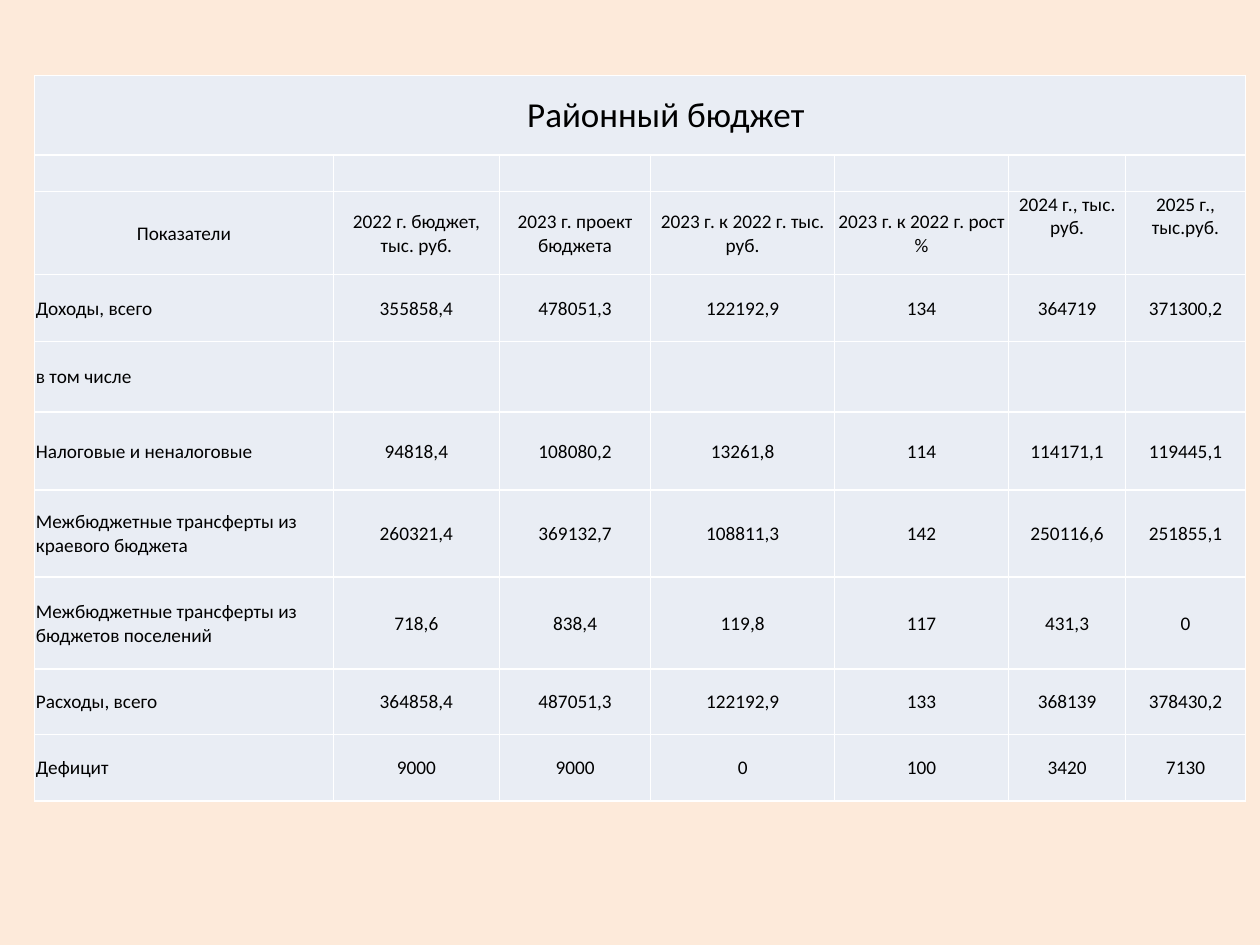
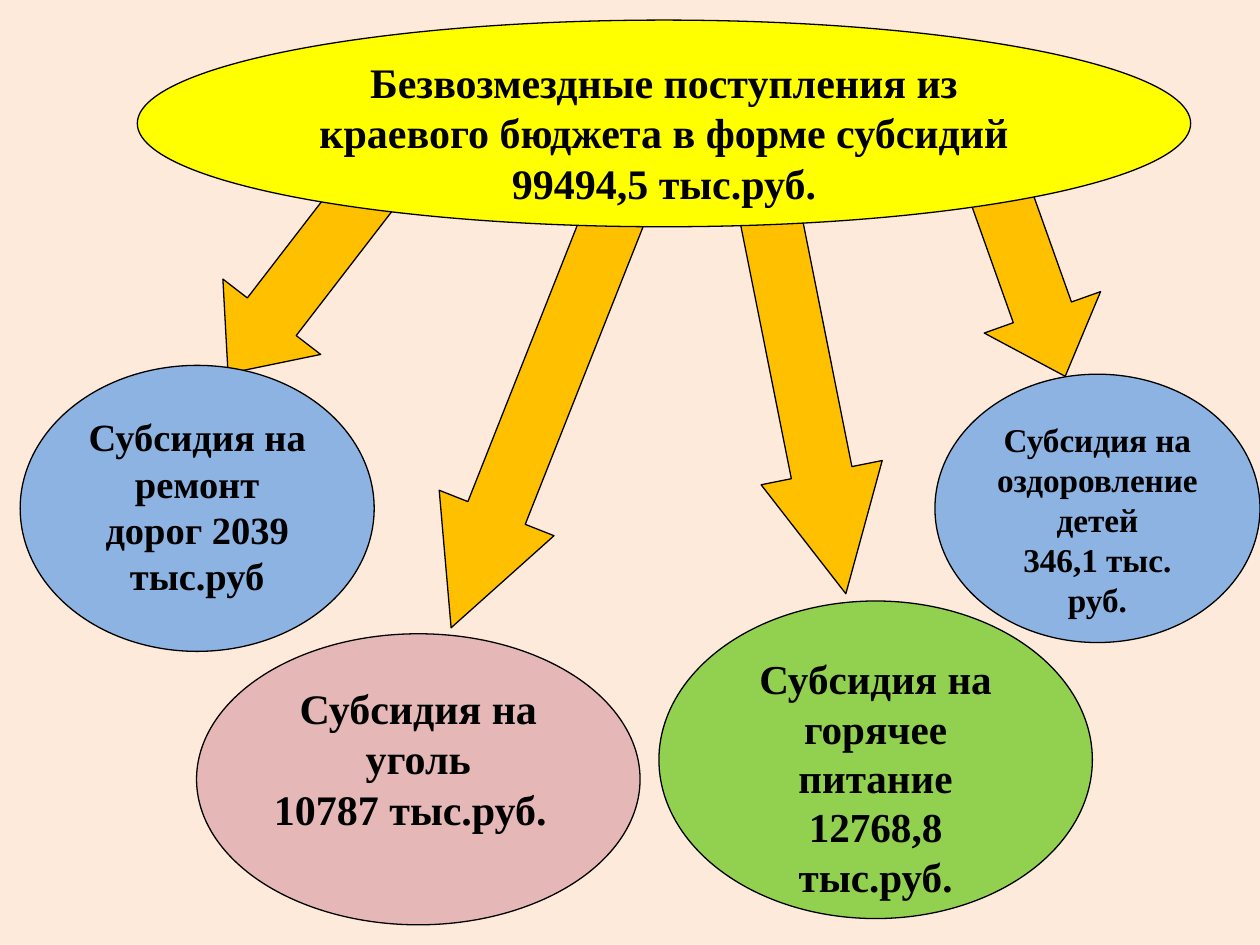
from dataclasses import dataclass

from lxml import etree
from pptx import Presentation
from pptx.dml.color import RGBColor
from pptx.enum.shapes import MSO_SHAPE
from pptx.enum.text import MSO_ANCHOR, PP_ALIGN
from pptx.oxml.ns import qn
from pptx.util import Inches, Pt

LEFT, CENTER = PP_ALIGN.LEFT, PP_ALIGN.CENTER
TOP, MIDDLE = MSO_ANCHOR.TOP, MSO_ANCHOR.MIDDLE
OVAL, DOWN_ARROW = MSO_SHAPE.OVAL, MSO_SHAPE.DOWN_ARROW
BLANK = 6
GRID_COLS, GRID_ROWS = 100, 75


@dataclass(frozen=True)
class Theme:
    background: str = "FDEADA"
    text: str = "000000"
    cell: str = "E9EDF4"
    border: str = "FFFFFF"
    arrow: str = "FFC000"
    total: str = "FFFF00"
    blue: str = "8DB3E2"
    pink: str = "E5B8B7"
    green: str = "92D050"
    table_font: str = "Calibri"
    oval_font: str = "Times New Roman"
    caption_size: float = 20
    cell_size: float = 11
    total_size: float = 24
    outline: float = 0.75
    border_width: float = 1


def write(tf, *lines, font, size, color, bold=False, aligns=(CENTER,)):
    """Write one paragraph per line; the last alignment serves the remaining lines."""
    tf.word_wrap = True
    for i, line in enumerate(lines):
        p = tf.paragraphs[0] if i == 0 else tf.add_paragraph()
        p.alignment = aligns[min(i, len(aligns) - 1)]
        if not line:
            etree.SubElement(p._p, qn("a:endParaRPr"), sz=str(int(size * 100)))
            continue
        r = p.add_run()
        r.text = line
        r.font.name, r.font.size, r.font.bold = font, Pt(size), bold
        r.font.color.rgb = RGBColor.from_string(color)


class Deck:
    def __init__(self, theme):
        self.theme = theme
        self.prs = Presentation()
        self.prs.slide_width, self.prs.slide_height = Inches(10), Inches(7.5)
        self.s = None

    def x(self, cols):
        return round(self.prs.slide_width * cols / GRID_COLS)

    def y(self, rows):
        return round(self.prs.slide_height * rows / GRID_ROWS)

    def box(self, left, top, width, height):
        return self.x(left), self.y(top), self.x(width), self.y(height)

    def slide(self):
        self.s = self.prs.slides.add_slide(self.prs.slide_layouts[BLANK])
        fill = self.s.background.fill
        fill.solid()
        fill.fore_color.rgb = RGBColor.from_string(self.theme.background)

    def shape(self, kind, at, color):
        sp = self.s.shapes.add_shape(kind, *self.box(*at))
        sp.shadow.inherit = False
        sp.fill.solid()
        sp.fill.fore_color.rgb = RGBColor.from_string(color)
        sp.line.color.rgb = RGBColor.from_string(self.theme.text)
        sp.line.width = Pt(self.theme.outline)
        return sp

    def arrow(self, at, rotation, head):
        sp = self.shape(DOWN_ARROW, at, self.theme.arrow)
        sp.rotation = rotation
        sp.adjustments[1] = head

    def oval(self, at, color, size, *lines, aligns=(CENTER,)):
        tf = self.shape(OVAL, at, color).text_frame
        tf.vertical_anchor = TOP
        write(tf, *lines, font=self.theme.oval_font, size=size,
              color=self.theme.text, bold=True, aligns=aligns)

    def cell(self, cell, text, size, align, anchor=MIDDLE, indent=0.1):
        cell.margin_left, cell.margin_right = self.x(indent), self.x(0.1)
        cell.margin_top, cell.margin_bottom = self.y(0.1), 0
        cell.vertical_anchor = anchor
        tcPr = cell._tc.get_or_add_tcPr()
        for side in ("a:lnL", "a:lnR", "a:lnT", "a:lnB"):
            ln = etree.SubElement(tcPr, qn(side), w=str(Pt(self.theme.border_width)))
            solid = etree.SubElement(ln, qn("a:solidFill"))
            etree.SubElement(solid, qn("a:srgbClr"), val=self.theme.border)
        cell.fill.solid()
        cell.fill.fore_color.rgb = RGBColor.from_string(self.theme.cell)
        write(cell.text_frame, text, font=self.theme.table_font, size=size,
              color=self.theme.text, aligns=(align,))

    def table(self, left, top, widths, heights, caption, header, body):
        at = self.box(left, top, sum(widths), sum(heights))
        table = self.s.shapes.add_table(len(heights), len(widths), *at).table
        table.first_row = table.horz_banding = False
        for column, width in zip(table.columns, widths):
            column.width = self.x(width)
        for row, height in zip(table.rows, heights):
            row.height = self.y(height)

        # Caption across the whole table, then an empty row
        blank = [""] * len(widths)
        table.cell(0, 0).merge(table.cell(0, len(widths) - 1))
        for i, text in enumerate([caption] + blank[1:]):
            self.cell(table.cell(0, i), text, self.theme.caption_size, CENTER, indent=4.2)

        # Header and figures
        for j, values in enumerate([blank, header, *body], start=1):
            for i, text in enumerate(values):
                align = LEFT if i == 0 and j > 2 else CENTER
                anchor = TOP if j == 2 and i >= 5 else MIDDLE
                self.cell(table.cell(j, i), text, self.theme.cell_size, align, anchor)


def budget_slide(deck):
    deck.slide()
    header = ["Показатели", "2022 г. бюджет, тыс. руб.", "2023 г. проект бюджета",
              "2023 г. к 2022 г. тыс. руб.", "2023 г. к 2022 г. рост %",
              "2024 г., тыс. руб.", "2025 г., тыс.руб."]
    body = [
        ["Доходы, всего", "355858,4", "478051,3", "122192,9", "134", "364719", "371300,2"],
        ["в том числе"] + [""] * 6,
        ["Налоговые и неналоговые",
         "94818,4", "108080,2", "13261,8", "114", "114171,1", "119445,1"],
        ["Межбюджетные трансферты из краевого бюджета",
         "260321,4", "369132,7", "108811,3", "142", "250116,6", "251855,1"],
        ["Межбюджетные трансферты из бюджетов поселений",
         "718,6", "838,4", "119,8", "117", "431,3", "0"],
        ["Расходы, всего", "364858,4", "487051,3", "122192,9", "133", "368139", "378430,2"],
        ["Дефицит", "9000", "9000", "0", "100", "3420", "7130"],
    ]
    deck.table(2.75, 6, [23.7, 13.2, 12, 14.6, 13.8, 9.3, 9.5],
               [6.3, 2.9, 6.6, 5.3, 5.6, 6.2, 6.9, 7.3, 5.2, 5.3],
               "Районный бюджет", header, body)


def subsidies_slide(deck):
    deck.slide()
    t = deck.theme

    # Arrows from the total to each subsidy: left, top, length, rotation, head
    for left, top, length, rotation, head in [
        (20.1, 9.4, 22.6, 37.6, 0.58),
        (38.1, 12.1, 39.1, 21.6, 1),
        (58.4, 8.4, 39.1, 348.7, 1),
        (76, 8.8, 21.7, 340.4, 0.55),
    ]:
        deck.arrow((left, top, 9.8, length), rotation, head)

    # Subsidies
    deck.oval((1.6, 29, 28.1, 22.7), t.blue, 22, "Субсидия на ремонт дорог 2039 тыс.руб")
    deck.oval((15.6, 50.3, 35.2, 23.1), t.pink, 24,
              "Субсидия на уголь", "10787 тыс.руб.", aligns=(CENTER, LEFT))
    deck.oval((52.3, 47.7, 34.4, 25.2), t.green, 23.5,
              "Субсидия на горячее питание", "12768,8 тыс.руб.")
    deck.oval((74.2, 29.7, 25.8, 21.3), t.blue, 19,
              "Субсидия на оздоровление детей", "346,1 тыс. руб.")

    # Total
    deck.oval((10.9, 1.6, 83.6, 16.4), t.total, t.total_size,
              "Безвозмездные поступления из краевого бюджета в форме субсидий",
              "99494,5 тыс.руб.")


def main():
    deck = Deck(Theme())
    budget_slide(deck)
    subsidies_slide(deck)
    deck.prs.save("out.pptx")


if __name__ == "__main__":
    main()
